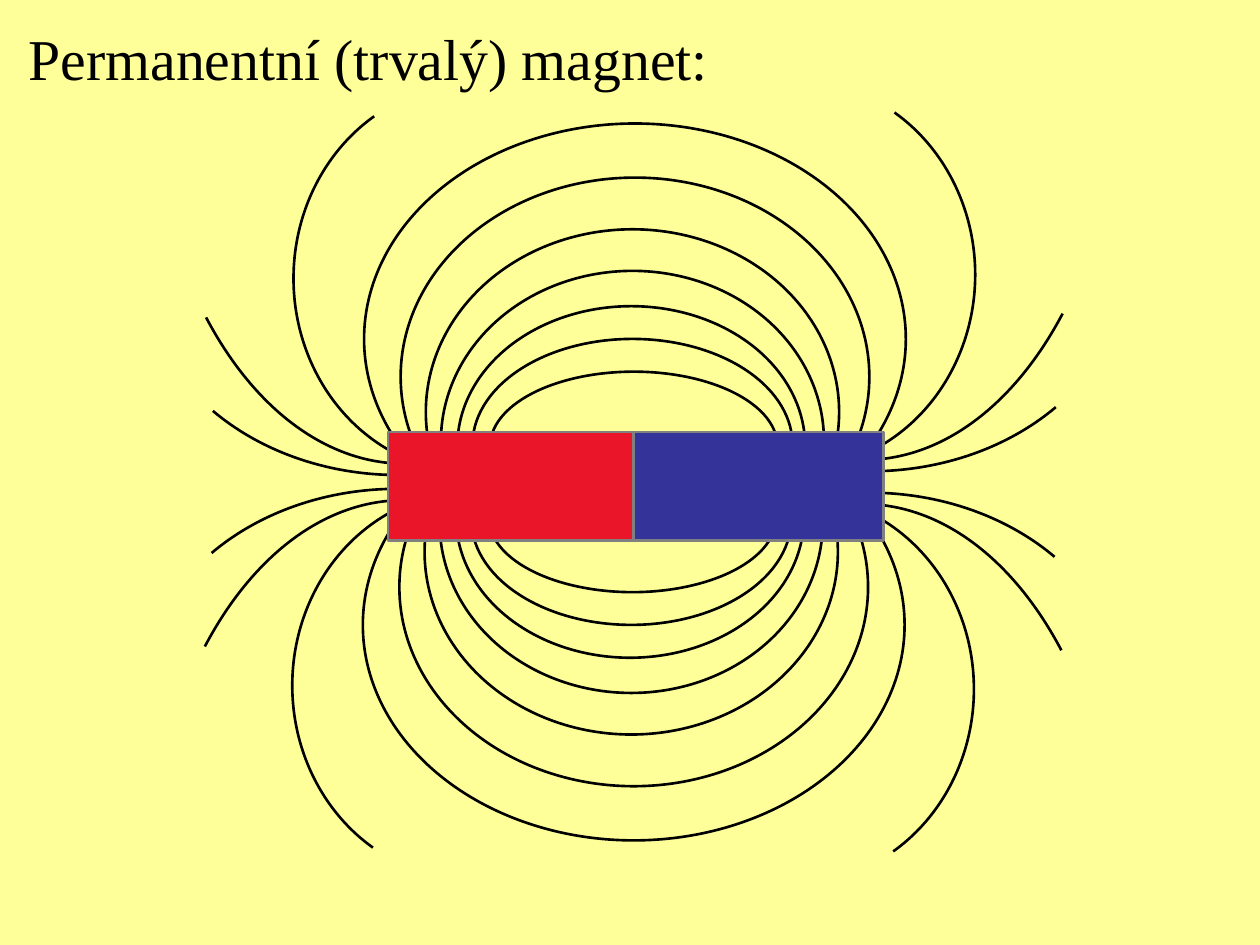
from math import asin, ceil, cos, pi, radians, sin, tan

from lxml.etree import SubElement
from pptx import Presentation
from pptx.dml.color import RGBColor
from pptx.enum.shapes import MSO_SHAPE
from pptx.oxml.ns import qn
from pptx.util import Inches, Pt

COLORS = {
    "background": "FFFF99",
    "ink": "000000",
    "north": "EB1529",
    "south": "333399",
    "border": "808080",
}
FONT = "Times New Roman"
LOOP_END = 3.55
VERTICAL_MIRROR = 7.65
HORIZONTAL_MIRROR = 10.07
BOTTOM_SHIFT = -0.01
RIGHT_SHIFT = -0.03

LOOPS = [
    (5.03, 3.54, 1.14, 0.59),
    (5.02, 3.53, 1.27, 0.84),
    (5.01, 3.54, 1.38, 1.11),
    (5.02, 3.5, 1.52, 1.35),
    (5.02, 3.27, 1.64, 1.45),
    (5.04, 2.99, 1.86, 1.58),
    (5.04, 2.69, 2.15, 1.71),
]
SIDE_LINES = [
    (3.75, 2.21, 1.42, 1.54, 250.7, 123.3),
    (3.16, 2.11, 2.04, 1.66, 271, 223.9),
    (3.21, 0.49, 2.04, 3.19, 270, 219.5),
]


def color(name):
    return RGBColor.from_string(COLORS[name])


def arc_points(center_x, center_y, radius_x, radius_y, start, end):
    def place(angle, pull):
        return (center_x + radius_x * (cos(angle) - pull * sin(angle)),
                center_y - radius_y * (sin(angle) + pull * cos(angle)))

    count = ceil(abs(end - start) / (pi / 3))
    step = (end - start) / count
    pull = 4 / 3 * tan(step / 4)
    points = [place(start, 0)]
    for index in range(count):
        angle = start + index * step
        points += [place(angle, pull), place(angle + step, -pull),
                   place(angle + step, 0)]
    return points


def loop_points(center_x, center_y, radius_x, radius_y):
    dip = asin((LOOP_END - center_y) / radius_y)
    return arc_points(center_x, center_y, radius_x, radius_y, pi + dip, -dip)


def mirror_right(points):
    return [(HORIZONTAL_MIRROR - x, y + RIGHT_SHIFT) for x, y in points]


def mirror_down(points):
    return [(x + BOTTOM_SHIFT, VERTICAL_MIRROR - y) for x, y in points]


def make_curved(shape):
    outline = next(shape._element.iter(qn("a:path")))
    segments = outline.findall(qn("a:lnTo"))
    for index in range(0, len(segments), 3):
        curve = SubElement(outline, qn("a:cubicBezTo"))
        for segment in segments[index:index + 3]:
            curve.append(segment[0])
            outline.remove(segment)


def add_field_line(shapes, points):
    start, *others = [(Inches(x), Inches(y)) for x, y in points]
    builder = shapes.build_freeform(*start)
    builder.add_line_segments(others, close=False)
    shape = builder.convert_to_shape()
    make_curved(shape)
    shape.shadow.inherit = False
    shape.fill.background()
    shape.line.color.rgb = color("ink")
    shape.line.width = Pt(1.5)


def add_pole(shapes, left, fill):
    shape = shapes.add_shape(MSO_SHAPE.RECTANGLE, Inches(left), Inches(3.43),
                             Inches(1.98), Inches(0.86))
    shape.shadow.inherit = False
    shape.fill.solid()
    shape.fill.fore_color.rgb = color(fill)
    shape.line.color.rgb = color("border")
    shape.line.width = Pt(1.5)


def add_text(slide, text, left, top, width, height, size, font=FONT, ink="ink"):
    box = slide.shapes.add_textbox(Inches(left), Inches(top),
                                   Inches(width), Inches(height))
    box.text_frame.word_wrap = True
    run = box.text_frame.paragraphs[0].add_run()
    run.text = text
    run.font.name = font
    run.font.size = Pt(size)
    run.font.color.rgb = color(ink)


def main():
    presentation = Presentation()
    presentation.slide_width = Inches(10)
    presentation.slide_height = Inches(7.5)
    slide = presentation.slides.add_slide(presentation.slide_layouts[6])
    slide.background.fill.solid()
    slide.background.fill.fore_color.rgb = color("background")

    magnet = slide.shapes.add_group_shape().shapes
    upper_lines = [loop_points(*loop) for loop in LOOPS]
    for *ellipse, start, end in SIDE_LINES:
        points = arc_points(*ellipse, radians(start), radians(end))
        upper_lines += [points, mirror_right(points)]
    for points in upper_lines:
        add_field_line(magnet, mirror_down(points))
        add_field_line(magnet, points)
    add_pole(magnet, 3.08, "north")
    add_pole(magnet, 5.03, "south")

    add_text(slide, "Permanentní (trvalý) magnet:", 0.13, 0.13, 6.3, 0.65, size=33)
    presentation.save("out.pptx")


if __name__ == "__main__":
    main()
